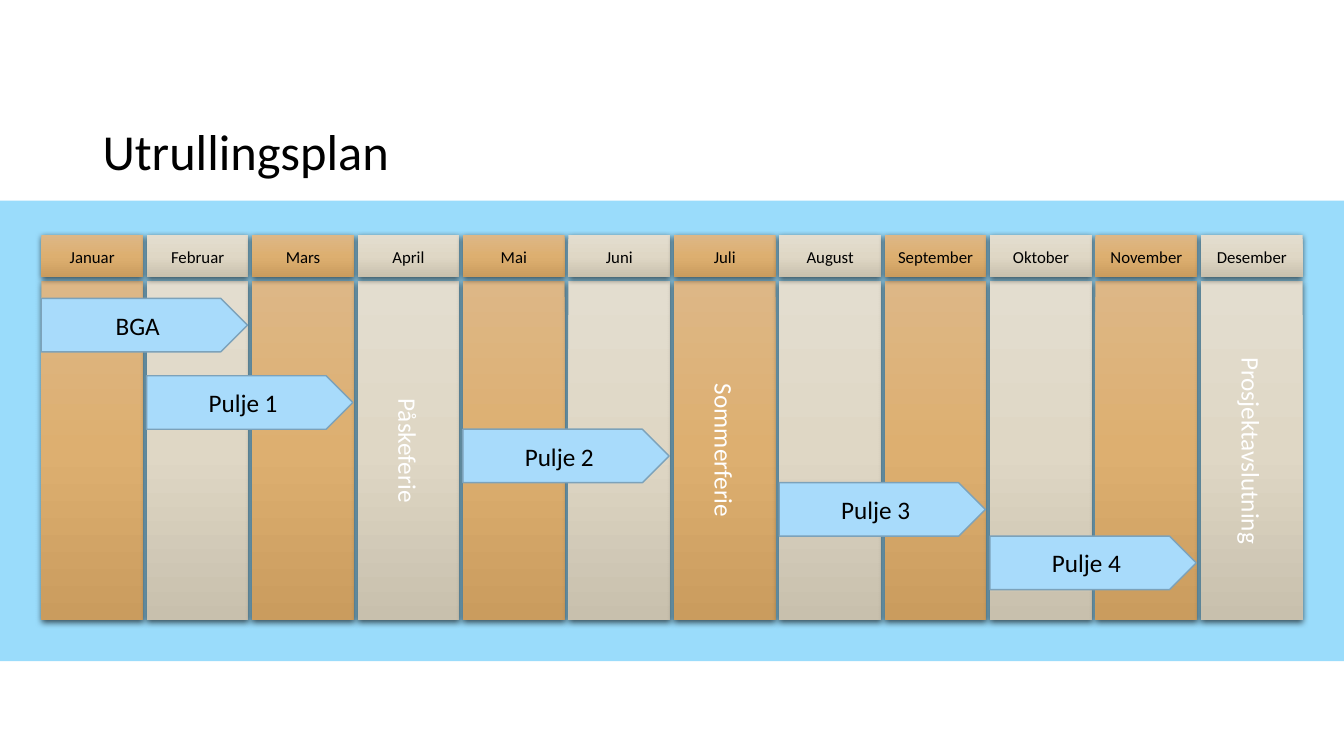
from copy import deepcopy
from dataclasses import dataclass

from lxml.etree import SubElement
from pptx import Presentation
from pptx.dml.color import RGBColor
from pptx.enum.shapes import MSO_SHAPE as Preset
from pptx.enum.text import MSO_ANCHOR as Anchor, PP_ALIGN as Align
from pptx.oxml.ns import qn
from pptx.util import Pt


@dataclass(frozen=True)
class Theme:
    font: str = "Calibri"
    band: str = "9ADCFB"
    wave: str = "A8DBFB"
    wave_edge: str = "7CA2BA"
    dark: str = "000000"
    light: str = "FFFFFF"
    tan: tuple = ("DDB786", "DDAF70", "CA9C5E")
    sand: tuple = ("E3DDCF", "DFD7C5", "C8C0AD")
    title_size: int = 36
    label_size: int = 18
    month_size: int = 12


theme = Theme()
color = RGBColor.from_string


def write(box, text, size=theme.label_size, ink=theme.dark, align=Align.CENTER,
          anchor=Anchor.MIDDLE, spacing=1.0, vertical=False):
    frame = box.text_frame
    frame.word_wrap = True
    frame.vertical_anchor = anchor
    if vertical:
        frame._txBody.bodyPr.set("vert", "vert")
    para = frame.paragraphs[0]
    para.alignment = align
    para.line_spacing = spacing
    span = para.add_run()
    span.text = text
    span.font.name = theme.font
    span.font.size = Pt(size)
    span.font.color.rgb = color(ink)


def add_panel(page, left, top, width, height, shades):
    """Add a rectangle with a three-step downward gradient and a soft shadow."""
    panel = page.shapes.add_shape(Preset.RECTANGLE, Pt(left), Pt(top), Pt(width), Pt(height))
    panel.line.fill.background()
    panel.fill.gradient()
    panel.fill.gradient_angle = 270
    properties = panel._element.spPr
    stops = properties.find(".//" + qn("a:gsLst"))
    stops.append(deepcopy(stops[0]))
    for stop, shade, position in zip(panel.fill.gradient_stops, shades, (0, 0.5, 1)):
        stop.color.rgb = color(shade)
        stop.position = position
    panel.shadow.inherit = False
    effects = properties.find(qn("a:effectLst"))
    shadow = SubElement(effects, qn("a:outerShdw"), blurRad=str(Pt(4.5)), dist=str(Pt(1.5)),
                        dir="5400000", algn="ctr", rotWithShape="0")
    shadow_color = SubElement(shadow, qn("a:srgbClr"), val=theme.dark)
    SubElement(shadow_color, qn("a:alpha"), val="63000")
    return panel


deck = Presentation()
deck.slide_width, deck.slide_height = Pt(960), Pt(540)
page = deck.slides.add_slide(deck.slide_layouts[6])

band = page.shapes.add_shape(Preset.RECTANGLE, 0, Pt(143.3), deck.slide_width, Pt(329))
band.shadow.inherit = False
band.fill.solid()
band.fill.fore_color.rgb = color(theme.band)
band.line.fill.background()

title = page.shapes.add_textbox(Pt(66.2), Pt(28.8), Pt(771), Pt(104.4))
write(title, "Utrullingsplan", size=theme.title_size, align=Align.LEFT,
      anchor=Anchor.BOTTOM, spacing=0.9)

months = ["Januar", "Februar", "Mars", "April", "Mai", "Juni", "Juli", "August",
          "September", "Oktober", "November", "Desember"]
month_notes = {"April": "Påskeferie", "Juli": "Sommerferie", "Desember": "Prosjektavslutning"}
first_left, pitch, month_width = 29.5, 75.3, 72.7
header_top, header_height = 168, 30.2
column_top, column_height = 200.9, 241.9

for index, month in enumerate(months):
    left = first_left + index * pitch
    shades = theme.sand if index % 2 else theme.tan
    column = add_panel(page, left, column_top, month_width, column_height, shades)
    if month in month_notes:
        write(column, month_notes[month], ink=theme.light, vertical=True)
    header = add_panel(page, left, header_top, month_width, header_height, shades)
    write(header, month, size=theme.month_size)

# Each wave spans two months from its starting month.
waves = [("BGA", "Januar", 213.1), ("Pulje 1", "Februar", 268.4), ("Pulje 2", "Mai", 306.6),
         ("Pulje 3", "August", 344.8), ("Pulje 4", "Oktober", 383)]
wave_width, wave_height = 147.3, 38.2

for name, start, top in waves:
    left = first_left + months.index(start) * pitch
    wave = page.shapes.add_shape(Preset.PENTAGON, Pt(left), Pt(top), Pt(wave_width), Pt(wave_height))
    wave.shadow.inherit = False
    wave.fill.solid()
    wave.fill.fore_color.rgb = color(theme.wave)
    wave.line.color.rgb = color(theme.wave_edge)
    wave.line.width = Pt(1)
    write(wave, name)

deck.save("out.pptx")
